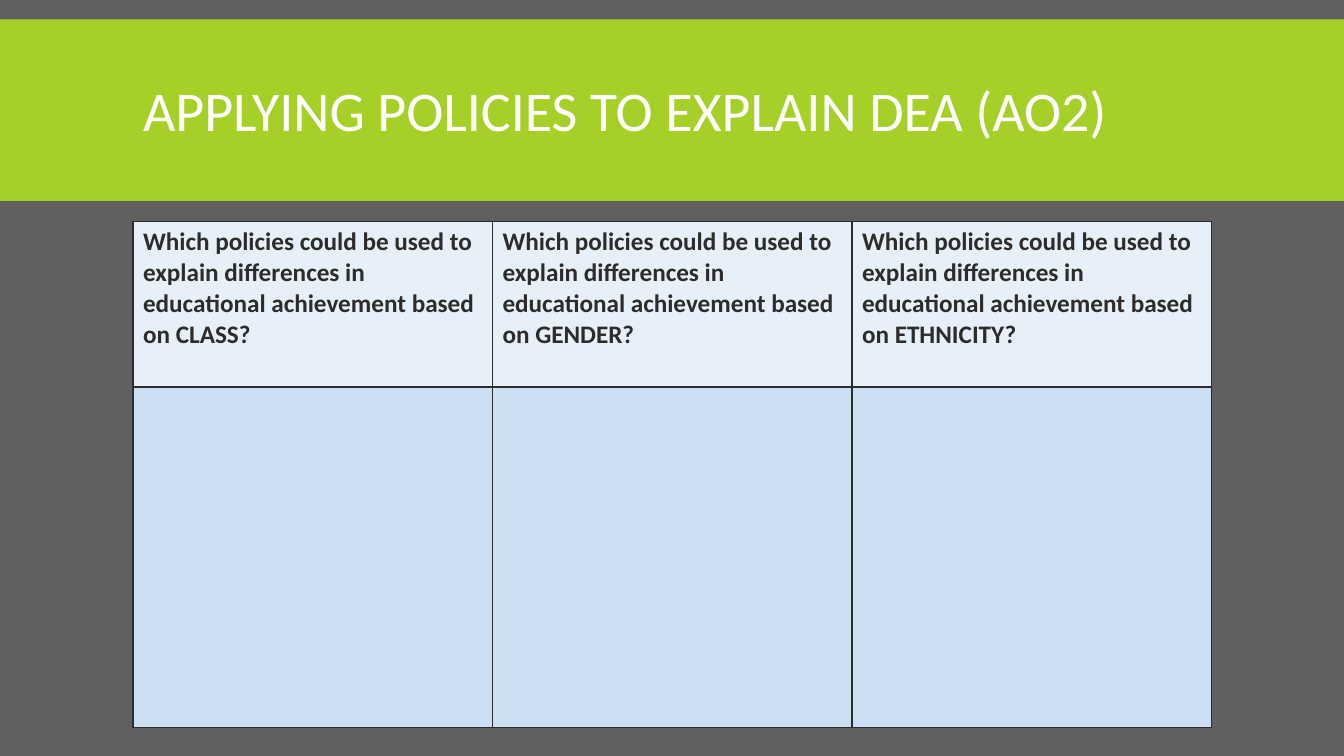
from pptx import Presentation
from pptx.dml.color import RGBColor as RGB
from pptx.enum.shapes import MSO_SHAPE as Shape
from pptx.enum.text import MSO_ANCHOR as Anchor, PP_ALIGN as Align
from pptx.oxml import parse_xml
from pptx.oxml.ns import nsdecls
from pptx.util import Pt

GREY = RGB(0x60, 0x60, 0x60)
GREEN = RGB(0xA5, 0xD0, 0x28)
WHITE = RGB(0xFF, 0xFF, 0xFF)
DARK = RGB(0x2C, 0x2C, 0x2C)
PALE = RGB(0xE7, 0xEF, 0xF9)
BLUE = RGB(0xCC, 0xDE, 0xF2)

FONT = "Calibri"
LEFT, WIDTH = 95, 770.4
ROWS = (118, 243.4)
TOPICS = ("CLASS", "GENDER", "ETHNICITY")


def add_run(para, text, size, color, bold=False):
    run = para.add_run()
    run.text = text
    font = run.font
    font.name, font.size, font.bold = FONT, Pt(size), bold
    font.color.rgb = color


def add_band(slide):
    band = slide.shapes.add_shape(Shape.RECTANGLE, Pt(0), Pt(13.9), Pt(960), Pt(129.6))
    band.shadow.inherit = False
    band.fill.solid()
    band.fill.fore_color.rgb = GREEN
    band.line.fill.background()
    slide.shapes._spTree.insert(2, band._element)


def set_title(slide, text):
    title = slide.shapes.title
    title.left, title.top = Pt(LEFT), Pt(22.3)
    title.width, title.height = Pt(WIDTH), Pt(118.8)
    frame = title.text_frame
    frame.word_wrap = True
    frame.vertical_anchor = Anchor.MIDDLE
    para = frame.paragraphs[0]
    para.alignment = Align.LEFT
    para.line_spacing = 0.85
    add_run(para, text, 40, WHITE)


def style_cell(cell, color):
    props = cell._tc.get_or_add_tcPr()
    for side in ("lnL", "lnR", "lnT", "lnB"):
        props.append(parse_xml(
            f'<a:{side} {nsdecls("a")} w="{Pt(1)}"><a:solidFill>'
            f'<a:srgbClr val="{DARK}"/></a:solidFill></a:{side}>'))
    cell.fill.solid()
    cell.fill.fore_color.rgb = color


def add_grid(slide):
    grid = slide.shapes.add_table(
        len(ROWS), len(TOPICS), Pt(LEFT), Pt(158.4), Pt(WIDTH), Pt(sum(ROWS))).table
    for row, height in zip(grid.rows, ROWS):
        row.height = Pt(height)
    for col, topic in enumerate(TOPICS):
        grid.columns[col].width = Pt(WIDTH / len(TOPICS))
        head, blank = grid.cell(0, col), grid.cell(1, col)
        style_cell(head, PALE)
        style_cell(blank, BLUE)
        text = ("Which policies could be used to explain differences in "
                f"educational achievement based on {topic}?")
        add_run(head.text_frame.paragraphs[0], text, 18, DARK, True)


def main():
    deck = Presentation()
    deck.slide_width, deck.slide_height = Pt(960), Pt(540)
    slide = deck.slides.add_slide(deck.slide_layouts[5])
    slide.background.fill.solid()
    slide.background.fill.fore_color.rgb = GREY
    add_band(slide)
    set_title(slide, "APPLYING POLICIES TO EXPLAIN DEA (AO2)")
    add_grid(slide)
    deck.save("out.pptx")


if __name__ == "__main__":
    main()
